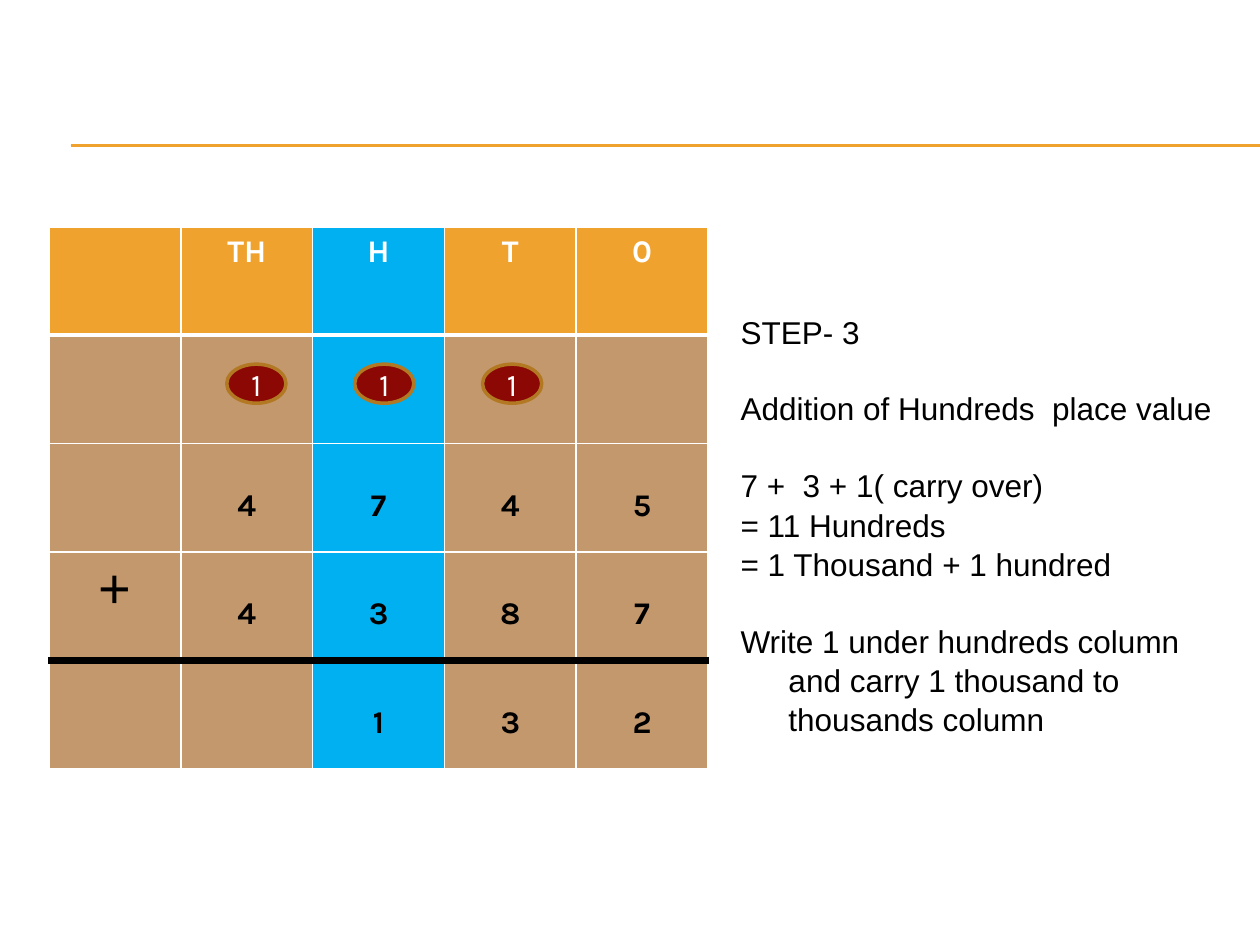
"""Build the column-addition slide for step 3, the hundreds place."""
import pptx
import pptx.dml.color
import pptx.enum.shapes
import pptx.enum.text
import pptx.oxml
import pptx.oxml.ns
import pptx.util

Inches, Pt = pptx.util.Inches, pptx.util.Pt
RGBColor = pptx.dml.color.RGBColor
CENTER = pptx.enum.text.PP_ALIGN.CENTER
MIDDLE = pptx.enum.text.MSO_ANCHOR.MIDDLE
SHAPE = pptx.enum.shapes.MSO_SHAPE

BLACK = RGBColor(0x00, 0x00, 0x00)
WHITE = RGBColor(0xFF, 0xFF, 0xFF)
ORANGE = RGBColor(0xF0, 0xA2, 0x2E)
TAN = RGBColor(0xC3, 0x98, 0x6D)
BLUE = RGBColor(0x00, 0xB0, 0xF0)
DARK_RED = RGBColor(0x8B, 0x08, 0x05)
BROWN = RGBColor(0xB2, 0x78, 0x22)

ROWS = [
    ["", "TH", "H", "T", "0"],
    ["", "", "", "", ""],
    ["", "4", "7", "4", "5"],
    ["+", "4", "3", "8", "7"],
    ["", "", "1", "3", "2"],
]
ACTIVE_COLUMN = 2
RULES = {1: (WHITE, 3), 4: (BLACK, 4.5)}
GRID_LINE = (WHITE, 1)
CARRIES = ["1", "1", "1"]
STEPS = [
    ("STEP- 3", False, 0),
    ("Addition of Hundreds  place value", False, 21.5),
    ("7 +  3 + 1( carry over)", True, 21.5),
    ("= 11 Hundreds", True, 0),
    ("= 1 Thousand + 1 hundred", True, 0),
    ("Write 1 under hundreds column and carry 1 thousand to thousands column", True, 21.5),
]


def set_font(p, name, size, color, bold=False):
    p.font.name, p.font.size, p.font.bold = name, Pt(size), bold
    p.font.color.rgb = color


def set_borders(cell, top, bottom):
    sides = {"lnL": GRID_LINE, "lnR": GRID_LINE, "lnT": top, "lnB": bottom}
    for i, (tag, (color, width)) in enumerate(sides.items()):
        ln = pptx.oxml.parse_xml(
            f'<a:{tag} {pptx.oxml.ns.nsdecls("a")} w="{Pt(width)}"><a:solidFill>'
            f'<a:srgbClr val="{color}"/></a:solidFill></a:{tag}>')
        cell._tc.get_or_add_tcPr().insert(i, ln)


def add_rule(s, y):
    line = s.shapes.add_connector(
        pptx.enum.shapes.MSO_CONNECTOR.STRAIGHT, Inches(0.56), Inches(y), Inches(10), Inches(y))
    line.line.color.rgb, line.line.width = ORANGE, Pt(0.75)
    line._element.spPr.append(pptx.oxml.parse_xml(f'<a:effectLst {pptx.oxml.ns.nsdecls("a")}/>'))


def add_steps(s):
    tf = s.shapes.add_textbox(Inches(5.78), Inches(2.42), Inches(4.06), Inches(3.43)).text_frame
    tf.word_wrap = True
    for i, (text, hanging, before) in enumerate(STEPS):
        p = tf.paragraphs[0] if i == 0 else tf.add_paragraph()
        p.text = text
        p.line_spacing = 1.04
        if before:
            p.space_before = Pt(before)
        if hanging:
            pPr = p._p.get_or_add_pPr()
            pPr.set("marL", str(Inches(0.38)))
            pPr.set("indent", str(-Inches(0.38)))
        set_font(p, "Arial", 18, BLACK)


def add_sum(s):
    table = s.shapes.add_table(
        len(ROWS), len(ROWS[0]), Inches(0.39), Inches(1.8), Inches(5.23), Inches(4.3)).table
    table.first_row = table.horz_banding = False
    for r, row in enumerate(ROWS):
        for c, text in enumerate(row):
            cell = table.cell(r, c)
            cell.fill.solid()
            cell.fill.fore_color.rgb = BLUE if c == ACTIVE_COLUMN else TAN if r else ORANGE
            set_borders(cell, RULES.get(r, GRID_LINE), RULES.get(r + 1, GRID_LINE))
            if not text:
                continue
            p = cell.text_frame.paragraphs[0]
            p.text, p.alignment = text, CENTER
            if text == "+":
                set_font(p, "Arial", 32, BLACK)
            else:
                set_font(p, "Karla", 18, BLACK if r else WHITE, True)
                cell.margin_top = Inches(0.35 if r else 0.05)


def add_carries(s):
    for i, text in enumerate(CARRIES):
        sp = s.shapes.add_shape(
            SHAPE.OVAL, Inches(1.8 + 1.015 * i), Inches(2.89), Inches(0.47), Inches(0.31))
        sp.shadow.inherit = False
        sp.fill.solid()
        sp.fill.fore_color.rgb = DARK_RED
        sp.line.color.rgb, sp.line.width = BROWN, Pt(2)
        tf = sp.text_frame
        tf.vertical_anchor = MIDDLE
        p = tf.paragraphs[0]
        p.text, p.alignment = text, CENTER
        set_font(p, "Karla", 18, WHITE)


def main():
    prs = pptx.Presentation()
    prs.slide_width, prs.slide_height = Inches(10), Inches(7.5)
    s = prs.slides.add_slide(prs.slide_layouts[6])
    for y in (1.15, 1.16):
        add_rule(s, y)
    add_steps(s)
    add_sum(s)
    add_carries(s)
    prs.save("out.pptx")


if __name__ == "__main__":
    main()
